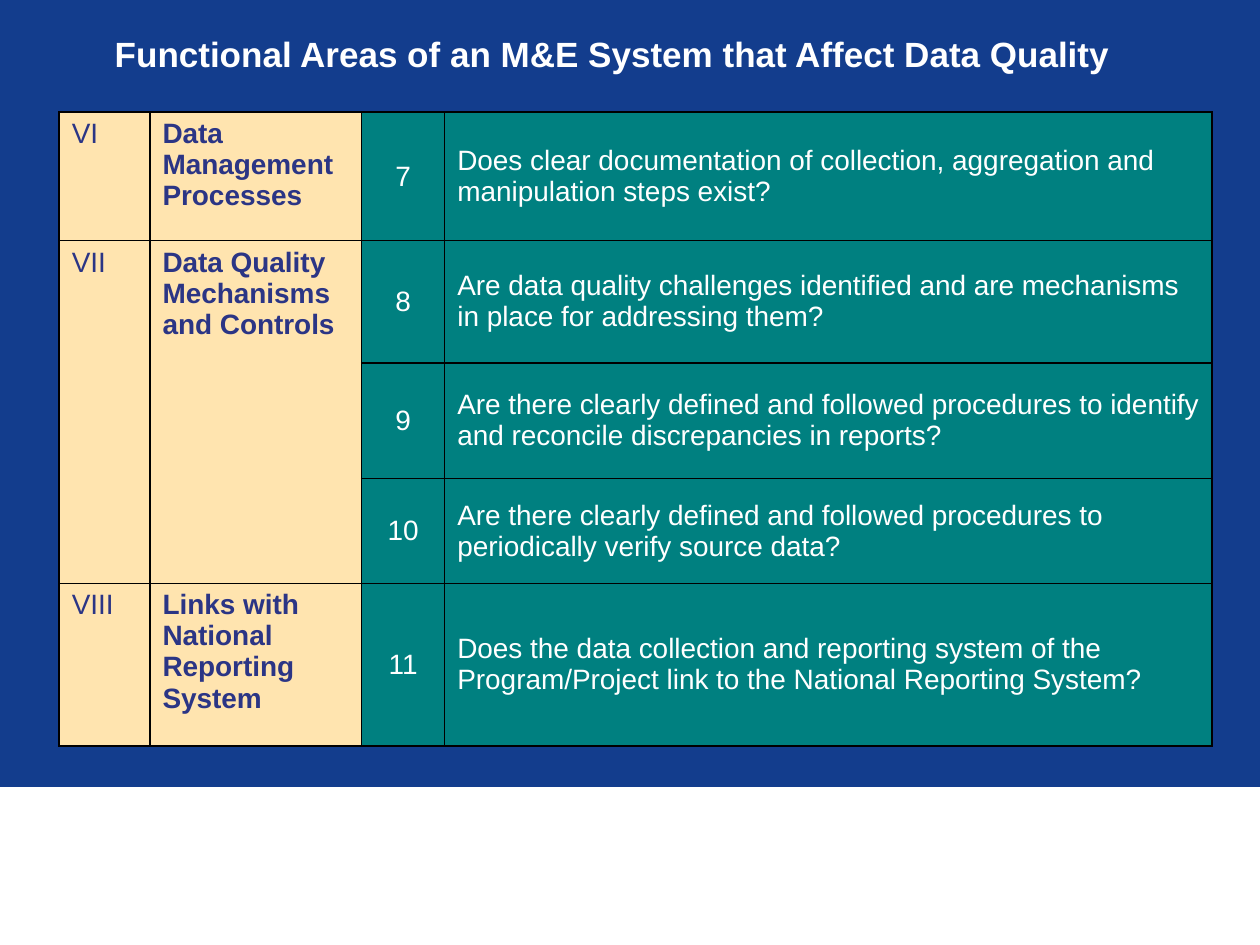
"""Builds the slide on functional areas of an M&E system."""
from dataclasses import dataclass

from lxml.etree import SubElement
from pptx import Presentation
from pptx.dml.color import RGBColor
from pptx.enum.shapes import MSO_SHAPE
from pptx.enum.text import MSO_ANCHOR, PP_ALIGN
from pptx.oxml.ns import qn
from pptx.util import Inches, Pt

NAVY, WHITE, BLACK = "133D8D", "FFFFFF", "000000"
INDIGO, CREAM, TEAL = "2B3585", "FFE4AF", "008080"
COLUMN_WIDTHS = (0.72, 1.68, 0.66, 6.09)


@dataclass
class Question:
    number: int
    text: str
    height: float


@dataclass
class Area:
    numeral: str
    name: str
    questions: list[Question]


AREAS = [
    Area("VI", "Data Management Processes", [
        Question(7, "Does clear documentation of collection, aggregation and "
                    "manipulation steps exist?", 1.02),
    ]),
    Area("VII", "Data Quality Mechanisms and Controls", [
        Question(8, "Are data quality challenges identified and are mechanisms "
                    "in place for addressing them?", 0.97),
        Question(9, "Are there clearly defined and followed procedures to "
                    "identify and reconcile discrepancies in reports?", 0.92),
        Question(10, "Are there clearly defined and followed procedures to "
                     "periodically verify source data?", 0.83),
    ]),
    Area("VIII", "Links with National Reporting System", [
        Question(11, "Does the data collection and reporting system of the "
                     "Program/Project link to the National Reporting System?", 1.29),
    ]),
]


def rgb(value: str) -> RGBColor:
    return RGBColor.from_string(value)


def write(tf, text: str, size: int, color: str, bold: bool = False,
          align=PP_ALIGN.LEFT) -> None:
    p = tf.paragraphs[0]
    p.text = text
    p.alignment = align
    p.font.name = "Arial"
    p.font.size = Pt(size)
    p.font.bold = bold
    p.font.color.rgb = rgb(color)


def style_cell(cell, fill: str) -> None:
    tc_pr = cell._tc.get_or_add_tcPr()
    for side in ("a:lnL", "a:lnR", "a:lnT", "a:lnB"):
        ln = SubElement(tc_pr, qn(side), w=str(Pt(1)))
        SubElement(SubElement(ln, qn("a:solidFill")), qn("a:srgbClr"), val=BLACK)
    cell.fill.solid()
    cell.fill.fore_color.rgb = rgb(fill)


def add_areas_table(s) -> None:
    questions = [q for area in AREAS for q in area.questions]
    table = s.shapes.add_table(
        len(questions), len(COLUMN_WIDTHS), Inches(0.47), Inches(0.89),
        Inches(sum(COLUMN_WIDTHS)), Inches(sum(q.height for q in questions))).table
    for column, width in zip(table.columns, COLUMN_WIDTHS):
        column.width = Inches(width)
    for i, q in enumerate(questions):
        table.rows[i].height = Inches(q.height)
        for j, fill in enumerate((CREAM, CREAM, TEAL, TEAL)):
            style_cell(table.cell(i, j), fill)
        number, text = table.cell(i, 2), table.cell(i, 3)
        number.vertical_anchor = text.vertical_anchor = MSO_ANCHOR.MIDDLE
        write(number.text_frame, str(q.number), 16, WHITE, align=PP_ALIGN.CENTER)
        write(text.text_frame, q.text, 16, WHITE)

    first = 0
    for area in AREAS:
        last = first + len(area.questions) - 1
        for j, (text, bold) in enumerate(((area.numeral, False), (area.name, True))):
            cell = table.cell(first, j)
            if last > first:
                cell.merge(table.cell(last, j))
            write(cell.text_frame, text, 16, INDIGO, bold)
        first = last + 1


def add_footer_band(s) -> None:
    band = s.shapes.add_shape(MSO_SHAPE.RECTANGLE, Inches(0), Inches(6.25),
                              Inches(10), Inches(1.25))
    band.shadow.inherit = False
    band.fill.solid()
    band.fill.fore_color.rgb = rgb(WHITE)
    band.line.color.rgb = rgb(WHITE)
    band.line.width = Pt(0.75)


def add_title(s) -> None:
    tf = s.shapes.add_textbox(Inches(0.26), Inches(0.21),
                              Inches(9.2), Inches(0.43)).text_frame
    tf.word_wrap = True
    write(tf, "Functional Areas of an M&E System that Affect Data Quality",
          20, WHITE, True, PP_ALIGN.CENTER)


def main() -> None:
    prs = Presentation()
    prs.slide_width, prs.slide_height = Inches(10), Inches(7.5)
    s = prs.slides.add_slide(prs.slide_layouts[6])
    s.background.fill.solid()
    s.background.fill.fore_color.rgb = rgb(NAVY)
    add_footer_band(s)
    add_areas_table(s)
    add_title(s)
    prs.save("out.pptx")


if __name__ == "__main__":
    main()
